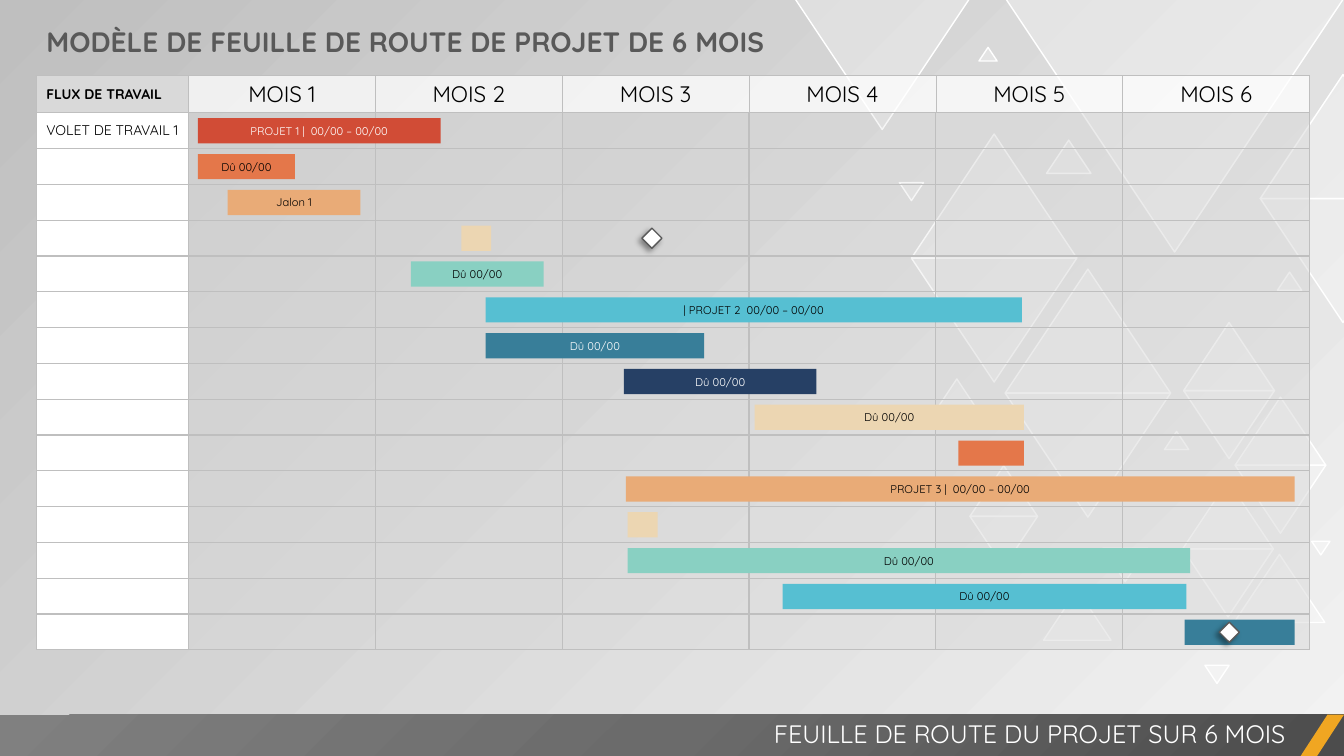
from lxml import etree
from pptx import Presentation
from pptx.dml.color import RGBColor
from pptx.enum.shapes import MSO_SHAPE
from pptx.enum.text import MSO_ANCHOR, PP_ALIGN
from pptx.oxml.ns import qn
from pptx.util import Inches, Pt

LEFT, CENTER, RIGHT = PP_ALIGN.LEFT, PP_ALIGN.CENTER, PP_ALIGN.RIGHT
MIDDLE = MSO_ANCHOR.MIDDLE
RECTANGLE, DIAMOND = MSO_SHAPE.RECTANGLE, MSO_SHAPE.DIAMOND
TRIANGLE, PARALLELOGRAM = MSO_SHAPE.ISOSCELES_TRIANGLE, MSO_SHAPE.PARALLELOGRAM
FONT = "Quicksand"
COLORS = {
    "white": "FFFFFF", "black": "000000", "gray": "595959", "grid": "BFBFBF",
    "cell": "D9D9D9", "light": "F2F2F2", "gold": "F0A622", "red": "D14C36",
    "orange": "E4774A", "peach": "E9AB77", "sand": "ECD6B2", "mint": "89D0C2",
    "sky": "56BFD2", "teal": "387E99", "navy": "264065",
    "dark": "4C4C4C", "medium": "6B6B6B", "soft": "808080",
}

TITLE = "MODÈLE DE FEUILLE DE ROUTE DE PROJET DE 6 MOIS"
FOOTER = "FEUILLE DE ROUTE DU PROJET SUR 6 MOIS"
CORNER = "FLUX DE TRAVAIL"
STREAMS = ["VOLET DE TRAVAIL 1"] + [""] * 14
MONTHS = [f"MOIS {number}" for number in range(1, 7)]
MONTH_OPACITY = [50, 50, 25, 25, 50, 50]
DUE = "Dû 00/00"
BARS = [
    (0.05, 1.30, "red", "PROJET 1 |  00/00 – 00/00", "white"),
    (0.05, 0.52, "orange", DUE, "black"),
    (0.21, 0.71, "peach", "Jalon 1", "black"),
    (1.46, 0.16, "sand", "", "black"),
    (1.19, 0.71, "mint", DUE, "black"),
    (1.59, 2.87, "sky", "| PROJET 2  00/00 – 00/00", "black"),
    (1.59, 1.17, "teal", DUE, "white"),
    (2.33, 1.03, "navy", DUE, "white"),
    (3.03, 1.44, "sand", DUE, "black"),
    (4.12, 0.35, "orange", "", "black"),
    (2.34, 3.58, "peach", "PROJET 3 |  00/00 – 00/00", "black"),
    (2.35, 0.16, "sand", "", "black"),
    (2.35, 3.01, "mint", DUE, "black"),
    (3.18, 2.16, "sky", DUE, "black"),
    (5.33, 0.59, "teal", "", "white"),
]
MILESTONES = [(2.48, 3), (5.57, 14)]

RHOMBI = [(9.04, 1.33, 1.64), (9.97, 2.67, 1.64), (11.73, 4.77, 0.9), (11.74, 3.2, 0.9),
          (12.25, 3.94, 0.9), (9.62, 4.62, 0.67), (12.5, 0.74, 1.64)]
UPWARD = [(12.24, 5.5, 0.9), (10.35, 5.85, 0.67), (9.27, 3.76, 0.44), (11.55, 4.28, 0.24),
          (12.67, 2.7, 0.24), (9.71, 0.47, 0.18), (10.38, 1.39, 0.44)]
DOWNWARD = [(9.97, -0.02, 3.36), (10.94, 5.44, 0.44), (11.95, 6.6, 0.24),
            (8.92, 1.81, 0.24), (13.01, 5.37, 0.18), (7.88, -0.02, 1.74)]
TRIANGLE_RATIO = 0.75

WIDTH, HEIGHT = 13.33, 7.5
GRID_LEFT, GRID_TOP, GRID_WIDTH, GRID_HEIGHT = 0.36, 0.75, 12.63, 5.7
STREAM_WIDTH, HEADER_HEIGHT = 1.51, 0.37
MONTH_WIDTH = (GRID_WIDTH - STREAM_WIDTH) / len(MONTHS)
ROW_HEIGHT = (GRID_HEIGHT - HEADER_HEIGHT) / len(STREAMS)
MONTHS_LEFT, ROWS_TOP = GRID_LEFT + STREAM_WIDTH, GRID_TOP + HEADER_HEIGHT
BAR_HEIGHT, MARKER = 0.25, 0.2
FOOTER_TOP = 7.09


def rgb(name):
    return RGBColor.from_string(COLORS[name])


def add_xml(parent, tag, **attributes):
    child = etree.SubElement(parent, qn(tag))
    for key, value in attributes.items():
        child.set(key, str(value))
    return child


def paint(fill, holder, color, opacity=100):
    fill.solid()
    fill.fore_color.rgb = rgb(color)
    if opacity < 100:
        add_xml(holder.find(qn("a:solidFill"))[0], "a:alpha", val=opacity * 1000)


def paint_gradient(fill, owner, stops):
    fill.gradient()
    gradient = owner.find(".//" + qn("a:gradFill"))
    for child in list(gradient):
        gradient.remove(child)
    stop_list = add_xml(gradient, "a:gsLst")
    for position, color, opacity in stops:
        stop = add_xml(stop_list, "a:gs", pos=position * 1000)
        tone = add_xml(stop, "a:srgbClr", val=COLORS[color])
        if opacity < 100:
            add_xml(tone, "a:alpha", val=opacity * 1000)
    return gradient


def write(frame, text, size, color, align=LEFT, bold=False):
    para = frame.paragraphs[0]
    para.alignment = align
    if not text:
        add_xml(para._p, "a:endParaRPr", sz=size * 100)
        return
    span = para.add_run()
    span.text = text
    span.font.name, span.font.size, span.font.bold = FONT, Pt(size), bold
    span.font.color.rgb = rgb(color)


def add_figure(page, kind, left, top, width, height, color, opacity=100, line=None):
    figure = page.shapes.add_shape(kind, Inches(left), Inches(top), Inches(width), Inches(height))
    figure.shadow.inherit = False
    paint(figure.fill, figure.element.spPr, color, opacity)
    if line:
        figure.line.color.rgb = rgb(line)
        figure.line.width = Pt(1)
    else:
        figure.line.fill.background()
    return figure


def add_triangles(page):
    upward = UPWARD + RHOMBI
    downward = DOWNWARD + [(left, top + width * TRIANGLE_RATIO, width) for left, top, width in RHOMBI]
    for angle, group in ((0, upward), (180, downward)):
        for left, top, width in group:
            triangle = add_figure(page, TRIANGLE, left, top, width, width * TRIANGLE_RATIO,
                                  "white", 30, "white")
            triangle.rotation = angle


def add_footer(page):
    height = HEIGHT - FOOTER_TOP
    band = add_figure(page, RECTANGLE, 0, FOOTER_TOP, WIDTH, height, "soft")
    gradient = paint_gradient(band.fill, band.element.spPr,
                              [(0, "dark", 100), (50, "medium", 100), (100, "soft", 100)])
    circle = add_xml(gradient, "a:path", path="circle")
    add_xml(circle, "a:fillToRect", l=100000, t=100000)
    accent = add_figure(page, PARALLELOGRAM, 12.9, FOOTER_TOP, 0.43, height, "gold")
    accent.adjustments[0] = 0.65
    box = page.shapes.add_textbox(Inches(5.25), Inches(7.08), Inches(7.6), Inches(0.4))
    box.text_frame.word_wrap = True
    write(box.text_frame, FOOTER, 18, "white", RIGHT)


def style_cell(cell, color, opacity, header):
    cell.vertical_anchor = MIDDLE
    cell.margin_top = cell.margin_bottom = Inches(0.02)
    cell.margin_right = Inches(0.04 if color == "white" and not header else 0.1)
    properties = cell._tc.get_or_add_tcPr()
    for side in ("a:lnL", "a:lnR", "a:lnT", "a:lnB"):
        thin = header and side != "a:lnB"
        edge = add_xml(properties, side, w=Pt(0.5 if thin else 1))
        add_xml(add_xml(edge, "a:solidFill"), "a:srgbClr", val=COLORS["grid"])
    paint(cell.fill, properties, color, opacity)


def add_grid(page):
    table = page.shapes.add_table(len(STREAMS) + 1, len(MONTHS) + 1, Inches(GRID_LEFT),
                                  Inches(GRID_TOP), Inches(GRID_WIDTH), Inches(GRID_HEIGHT)).table
    table.first_row = table.horz_banding = False
    for index, column in enumerate(table.columns):
        column.width = Inches(MONTH_WIDTH if index else STREAM_WIDTH)
    for index, row in enumerate(table.rows):
        row.height = Inches(ROW_HEIGHT if index else HEADER_HEIGHT)
    header = [(CORNER, 10, LEFT, True, "cell", 100)]
    header += [(month, 16, CENTER, False, "white", 75) for month in MONTHS]
    body = [[(stream, 10, LEFT, False, "white", 100)]
            + [("", 10, LEFT, False, "cell", opacity) for opacity in MONTH_OPACITY]
            for stream in STREAMS]
    for row, entries in enumerate([header] + body):
        for column, (text, size, align, bold, color, opacity) in enumerate(entries):
            cell = table.cell(row, column)
            style_cell(cell, color, opacity, row == 0)
            write(cell.text_frame, text, size, "black", align, bold)


def add_schedule(page):
    for row, (start, length, color, label, ink) in enumerate(BARS):
        top = ROWS_TOP + row * ROW_HEIGHT + (ROW_HEIGHT - BAR_HEIGHT) / 2
        bar = add_figure(page, RECTANGLE, MONTHS_LEFT + start * MONTH_WIDTH, top,
                         length * MONTH_WIDTH, BAR_HEIGHT, color)
        bar.text_frame.vertical_anchor = MIDDLE
        if label:
            write(bar.text_frame, label, 8, ink, CENTER)
    for month, row in MILESTONES:
        marker = add_figure(page, DIAMOND, MONTHS_LEFT + month * MONTH_WIDTH - MARKER / 2,
                            ROWS_TOP + (row + 0.5) * ROW_HEIGHT - MARKER / 2,
                            MARKER, MARKER, "white", line="gray")
        effects = marker.element.spPr.find(qn("a:effectLst"))
        shadow = add_xml(effects, "a:outerShdw", blurRad=Pt(4), dist=Pt(3), dir=135 * 60000)
        add_xml(add_xml(shadow, "a:srgbClr", val=COLORS["black"]), "a:alpha", val=40000)


def main():
    deck = Presentation()
    deck.slide_width, deck.slide_height = Inches(WIDTH), Inches(HEIGHT)
    page = deck.slides.add_slide(deck.slide_layouts[5])
    backdrop = paint_gradient(page.background.fill, page.element,
                              [(0, "light", 40), (100, "grid", 100)])
    add_xml(backdrop, "a:lin", ang=225 * 60000, scaled=0)
    title = page.shapes.title
    title.left, title.top, title.width, title.height = map(Inches, (GRID_LEFT, 0.19, 7.99, 0.44))
    title.text_frame.vertical_anchor = MIDDLE
    write(title.text_frame, TITLE, 20, "gray", LEFT, True)
    add_triangles(page)
    add_footer(page)
    add_grid(page)
    add_schedule(page)
    deck.save("out.pptx")


if __name__ == "__main__":
    main()
